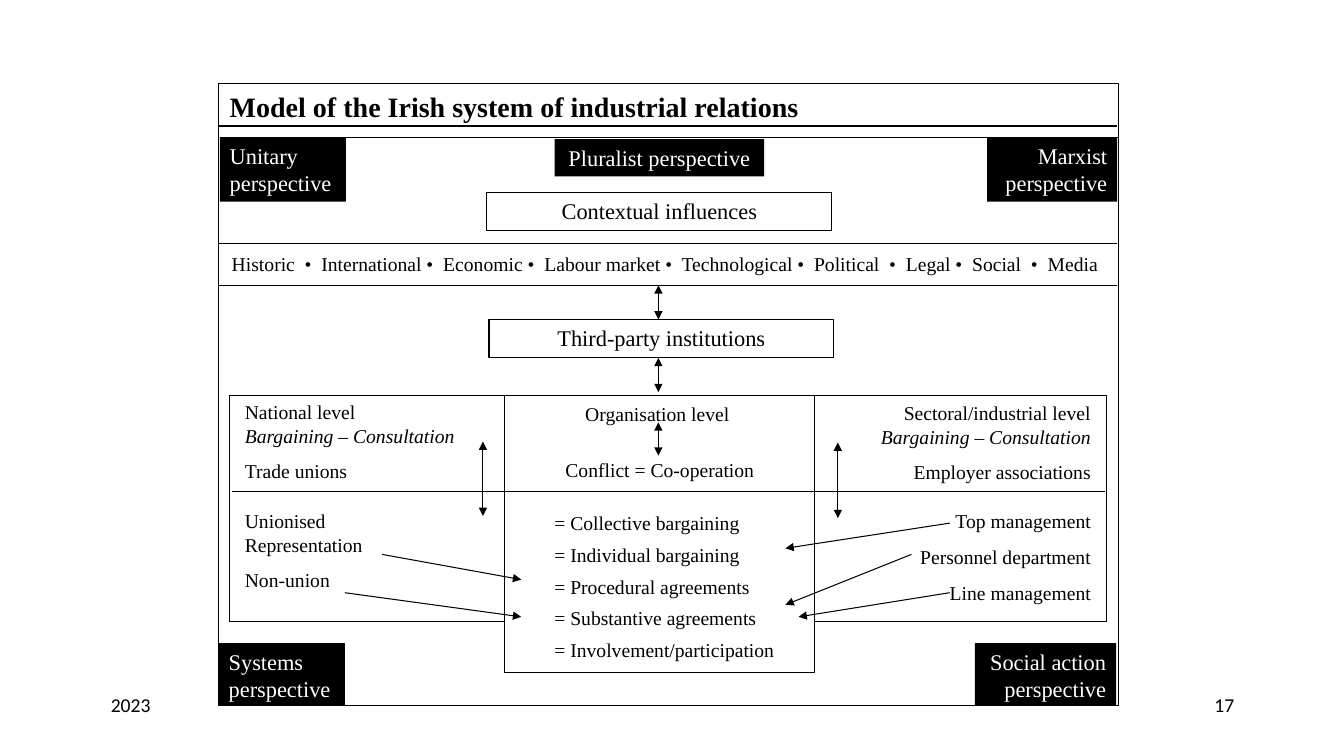
from dataclasses import dataclass
from lxml import etree
from pptx import Presentation
from pptx.dml.color import RGBColor
from pptx.enum.shapes import MSO_CONNECTOR, MSO_SHAPE
from pptx.enum.text import MSO_ANCHOR, PP_ALIGN
from pptx.oxml.ns import qn
from pptx.util import Inches, Pt


@dataclass(frozen=True)
class Theme:
    black: RGBColor = RGBColor(0, 0, 0)
    white: RGBColor = RGBColor(255, 255, 255)
    serif: str = "Times New Roman"
    sans: str = "Calibri"
    title: int = 20
    label: int = 16
    body: int = 14
    line: float = 0.75


T = Theme()
L, C, R = PP_ALIGN.LEFT, PP_ALIGN.CENTER, PP_ALIGN.RIGHT
BARGAINING = "Bargaining – Consultation"

# Panels: left, top, width, height, alignment, lines, first spaced line,
# line spacing, space before in points
PANELS = [
    (8.54, 5, 2.38, 1.38, R, ["Top management", "Personnel department", "Line management"], 1, 1, 9),
    (5.4, 4.94, 2.5, 1.88, L, ["= Collective bargaining", "= Individual bargaining",
                               "= Procedural agreements", "= Substantive agreements",
                               "= Involvement/participation"], 0, 1.35, 0),
    (5.33, 3.94, 2.38, 0.38, C, ["Organisation level"], 0, 1, 0),
    (5.17, 4.49, 2.75, 0.5, C, ["Conflict = Co-operation"], 0, 1, 0),
    (2.33, 5, 2.62, 1.25, L, ["Unionised", "Representation", "Non-union"], 2, 1.5, 0),
    (2.33, 3.92, 2.67, 0.91, L, ["National level", BARGAINING, "Trade unions"], 2, 1.5, 0),
    (8.42, 3.93, 2.5, 0.88, R, ["Sectoral/industrial level", BARGAINING,
                                "Employer associations"], 2, 1.5, 0),
]
FRAMES = [(2.17, 0.83, 8.92, 6.17), (2.28, 3.92, 2.72, 2.25),
          (8.08, 3.92, 2.9, 2.25), (5, 3.92, 3.08, 2.75)]
PERSPECTIVES = [
    (2.18, 1.36, 1.25, 0.64, L, ["Unitary perspective"]),
    (9.79, 1.36, 1.29, 0.64, R, ["Marxist perspective"]),
    (5.5, 1.38, 2.08, 0.37, C, ["Pluralist perspective"]),
    (2.17, 6.38, 1.25, 0.62, L, ["Systems", "perspective"]),
    (9.67, 6.38, 1.4, 0.62, R, ["Social action", "perspective"]),
]
HEADINGS = [(4.83, 1.91, "Contextual influences"), (4.85, 3.17, "Third-party institutions")]
HEADING_SIZE = (3.42, 0.38)
INFLUENCES = ("Historic  •  International •  Economic •  Labour market •  Technological •  "
              "Political  •  Legal •  Social  •  Media")
# Captions: left, top, width, height, alignment, text, size, font, bold
CAPTIONS = [
    (2.18, 0.84, 8.83, 0.43, L, "Model of the Irish system of industrial relations", T.title, T.serif, True),
    (2.2, 2.45, 8.92, 0.33, L, INFLUENCES, T.body, T.serif, False),
    (9.56, 6.83, 2.78, 0.5, R, "17", T.body, T.sans, False),
    (1, 6.83, 2.78, 0.5, L, "2023", T.body, T.sans, False),
]
# Rules: left, right, y
RULES = [(2.17, 11.08, 1.25), (2.18, 11.1, 1.36), (2.17, 11.08, 2.42),
         (2.17, 11.08, 2.83), (2.3, 10.96, 4.88)]
# Two-way arrows: x, top, bottom
EXCHANGES = [(6.53, 2.83, 3.17), (6.53, 3.55, 3.89), (6.53, 4.19, 4.52),
             (4.79, 4.38, 5.12), (8.31, 4.39, 5.14)]
# One-way arrows: from x, from y, to x, to y
INPUTS = [(3.79, 5.5, 5.17, 5.75), (3.42, 5.88, 5.17, 6.12), (9.04, 5.5, 7.79, 6),
          (9.42, 5.88, 7.92, 6.12), (9.42, 5.19, 7.79, 5.44)]


def add_box(s, x, y, w, h, fill=None, outlined=False):
    place = [Inches(v) for v in (x, y, w, h)]
    if fill is None and not outlined:
        return s.shapes.add_textbox(*place)
    sp = s.shapes.add_shape(MSO_SHAPE.RECTANGLE, *place)
    sp.shadow.inherit = False
    if fill is None:
        sp.fill.background()
    else:
        sp.fill.solid()
        sp.fill.fore_color.rgb = fill
    if outlined:
        sp.line.color.rgb = T.black
        sp.line.width = Pt(T.line)
    else:
        sp.line.fill.background()
    return sp


def write(sp, lines, align, size, color=T.black, font=T.serif, bold=False,
          spaced_from=0, spacing=1, before=0):
    """Fill a box; spacing applies from the paragraph numbered spaced_from."""
    tf = sp.text_frame
    tf.word_wrap = True
    tf.vertical_anchor = MSO_ANCHOR.TOP
    for i, text in enumerate(lines):
        p = tf.add_paragraph() if i else tf.paragraphs[0]
        p.alignment = align
        if i >= spaced_from:
            p.line_spacing = float(spacing)
            p.space_before = Pt(before)
        r = p.add_run()
        r.text = text
        r.font.name, r.font.size = font, Pt(size)
        r.font.bold, r.font.italic = bold, text == BARGAINING
        r.font.color.rgb = color


def add_line(s, x1, y1, x2, y2, *ends):
    """Draw a line with arrowheads at the named ends (headEnd, tailEnd)."""
    cn = s.shapes.add_connector(MSO_CONNECTOR.STRAIGHT, *[Inches(v) for v in (x1, y1, x2, y2)])
    cn.line.color.rgb = T.black
    cn.line.width = Pt(T.line)
    ln = cn.line._get_or_add_ln()
    for end in ends:
        etree.SubElement(ln, qn(f"a:{end}")).set("type", "triangle")
    etree.SubElement(cn._element.spPr, qn("a:effectLst"))


def main():
    prs = Presentation()
    prs.slide_width, prs.slide_height = Inches(13.33), Inches(7.5)
    s = prs.slides.add_slide(prs.slide_layouts[6])

    for *place, align, lines, spaced_from, spacing, before in PANELS:
        write(add_box(s, *place, fill=T.white), lines, align, T.body,
              spaced_from=spaced_from, spacing=spacing, before=before)
    for frame in FRAMES:
        add_box(s, *frame, outlined=True)
    for *place, align, lines in PERSPECTIVES:
        write(add_box(s, *place, fill=T.black), lines, align, T.label, T.white)
    for x, y, text in HEADINGS:
        write(add_box(s, x, y, *HEADING_SIZE, outlined=True), [text], C, T.label)
    for *place, align, text, size, font, bold in CAPTIONS:
        write(add_box(s, *place), [text], align, size, font=font, bold=bold)

    for left, right, y in RULES:
        add_line(s, left, y, right, y)
    for x, top, bottom in EXCHANGES:
        add_line(s, x, top, x, bottom, "headEnd", "tailEnd")
    for arrow in INPUTS:
        add_line(s, *arrow, "tailEnd")
    prs.save("out.pptx")


if __name__ == "__main__":
    main()
